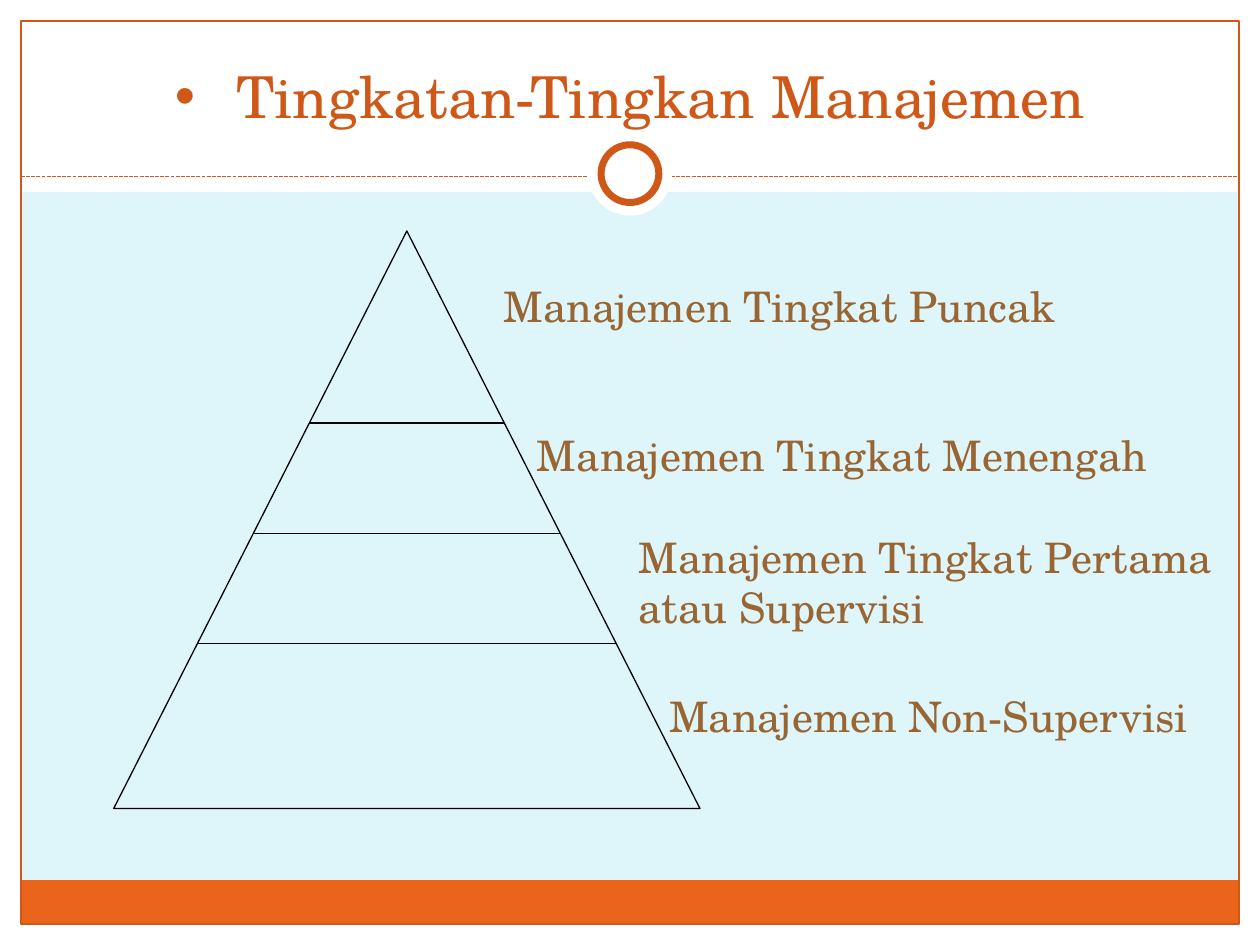
from lxml.etree import SubElement
from pptx import Presentation
from pptx.dml.color import RGBColor
from pptx.enum.dml import MSO_LINE
from pptx.enum.shapes import MSO_CONNECTOR, MSO_SHAPE
from pptx.enum.text import MSO_ANCHOR, MSO_AUTO_SIZE, PP_ALIGN
from pptx.oxml.ns import qn
from pptx.util import Pt

FONT = "TeX Gyre Schola"
WHITE = RGBColor(0xFF, 0xFF, 0xFF)
BLACK = RGBColor(0x00, 0x00, 0x00)
PALE_BLUE = RGBColor(0xDE, 0xF5, 0xFA)
ORANGE = RGBColor(0xEB, 0x64, 0x1B)
RUST = RGBColor(0xCF, 0x58, 0x18)
BROWN = RGBColor(0x99, 0x66, 0x33)

WIDTH, HEIGHT, MARGIN = 720, 540, 12
APEX_X, APEX_Y = 232.5, 132
PYRAMID_W, PYRAMID_H = 335, 330
LEVEL_YS = (241.75, 304.75, 367.75)

LABELS = [
    (["Manajemen Tingkat Puncak"], 280.75, 157, 408, 59),
    (["Manajemen Tingkat Menengah"], 299.75, 242, 420, 59),
    (["Manajemen Tingkat Pertama", "atau Supervisi"], 357.75, 300, 362, 79),
    (["Manajemen Non-Supervisi"], 375.25, 391, 344, 59),
]


def add_shape(slide, kind, x, y, w, h, fill=None, line=None, weight=0.75):
    sp = slide.shapes.add_shape(kind, Pt(x), Pt(y), Pt(w), Pt(h))
    sp.shadow.inherit = False
    if fill is None:
        sp.fill.background()
    else:
        sp.fill.solid()
        sp.fill.fore_color.rgb = fill
    if line is None:
        sp.line.fill.background()
    else:
        sp.line.color.rgb = line
        sp.line.width = Pt(weight)
    return sp


def add_horizontal(slide, x1, x2, y, color, dash=None):
    line = slide.shapes.add_connector(
        MSO_CONNECTOR.STRAIGHT, Pt(x1), Pt(y), Pt(x2), Pt(y))
    line.line.color.rgb = color
    line.line.width = Pt(0.75)
    if dash is not None:
        line.line.dash_style = dash
    SubElement(line._element.spPr, qn("a:effectLst"))


def write_text(tf, lines, size, color, align=PP_ALIGN.LEFT,
               anchor=MSO_ANCHOR.TOP, bullet_indent=None):
    tf.word_wrap = True
    tf.auto_size = MSO_AUTO_SIZE.NONE
    tf.vertical_anchor = anchor
    for i, text in enumerate(lines):
        p = tf.paragraphs[0] if i == 0 else tf.add_paragraph()
        p.alignment = align
        if bullet_indent is not None:
            pPr = p._p.get_or_add_pPr()
            pPr.set("marL", str(Pt(bullet_indent)))
            pPr.set("indent", str(-Pt(bullet_indent)))
            SubElement(pPr, qn("a:buFont"), typeface="Arial")
            SubElement(pPr, qn("a:buChar"), char="•")
        r = p.add_run()
        r.text = text
        r.font.name = FONT
        r.font.size = Pt(size)
        r.font.color.rgb = color


def add_frame(slide):
    """White margins, footer bar, border and the ringed divider."""
    rect, oval = MSO_SHAPE.RECTANGLE, MSO_SHAPE.OVAL
    inner_w, inner_h = WIDTH - 2 * MARGIN, HEIGHT - 2 * MARGIN
    for box in ((0, HEIGHT - MARGIN, WIDTH, MARGIN),
                (0, 0, WIDTH, 109.75),
                (0, 0, MARGIN, HEIGHT),
                (WIDTH - MARGIN, 0, MARGIN, HEIGHT)):
        add_shape(slide, rect, *box, fill=WHITE)
    add_shape(slide, rect, MARGIN, 503, inner_w, 25, fill=ORANGE)
    add_shape(slide, rect, MARGIN, MARGIN, inner_w, inner_h, line=RUST)
    add_horizontal(slide, MARGIN, WIDTH - MARGIN, 100.75, RUST,
                   MSO_LINE.SQUARE_DOT)
    add_shape(slide, oval, 336, 75.25, 48, 48, fill=WHITE)
    add_shape(slide, oval, 343.5, 82.75, 33, 33, fill=WHITE, line=RUST, weight=4)


def add_title(slide, text):
    title = slide.shapes.title
    title.left, title.top, title.width, title.height = (
        Pt(24), Pt(18), Pt(672), Pt(60))
    write_text(title.text_frame, [text], 33, RUST, PP_ALIGN.CENTER,
               MSO_ANCHOR.BOTTOM, bullet_indent=35)
    # Bring the title in front of the white header band.
    slide.shapes._spTree.append(title._element)


def add_label(slide, lines, x, y, w, h):
    box = slide.shapes.add_textbox(Pt(x), Pt(y), Pt(w), Pt(h))
    write_text(box.text_frame, lines, 24, BROWN)


def add_pyramid(slide):
    add_shape(slide, MSO_SHAPE.ISOSCELES_TRIANGLE, APEX_X - PYRAMID_W / 2,
              APEX_Y, PYRAMID_W, PYRAMID_H, line=BLACK)
    for y in LEVEL_YS:
        half = PYRAMID_W / 2 * (y - APEX_Y) / PYRAMID_H
        add_horizontal(slide, APEX_X - half, APEX_X + half, y, BLACK)


def main():
    prs = Presentation()
    prs.slide_width, prs.slide_height = Pt(WIDTH), Pt(HEIGHT)
    slide = prs.slides.add_slide(prs.slide_layouts[5])
    slide.background.fill.solid()
    slide.background.fill.fore_color.rgb = PALE_BLUE
    add_frame(slide)
    add_title(slide, "Tingkatan-Tingkan Manajemen")
    for label in LABELS:
        add_label(slide, *label)
    add_pyramid(slide)
    prs.save("out.pptx")


if __name__ == "__main__":
    main()
